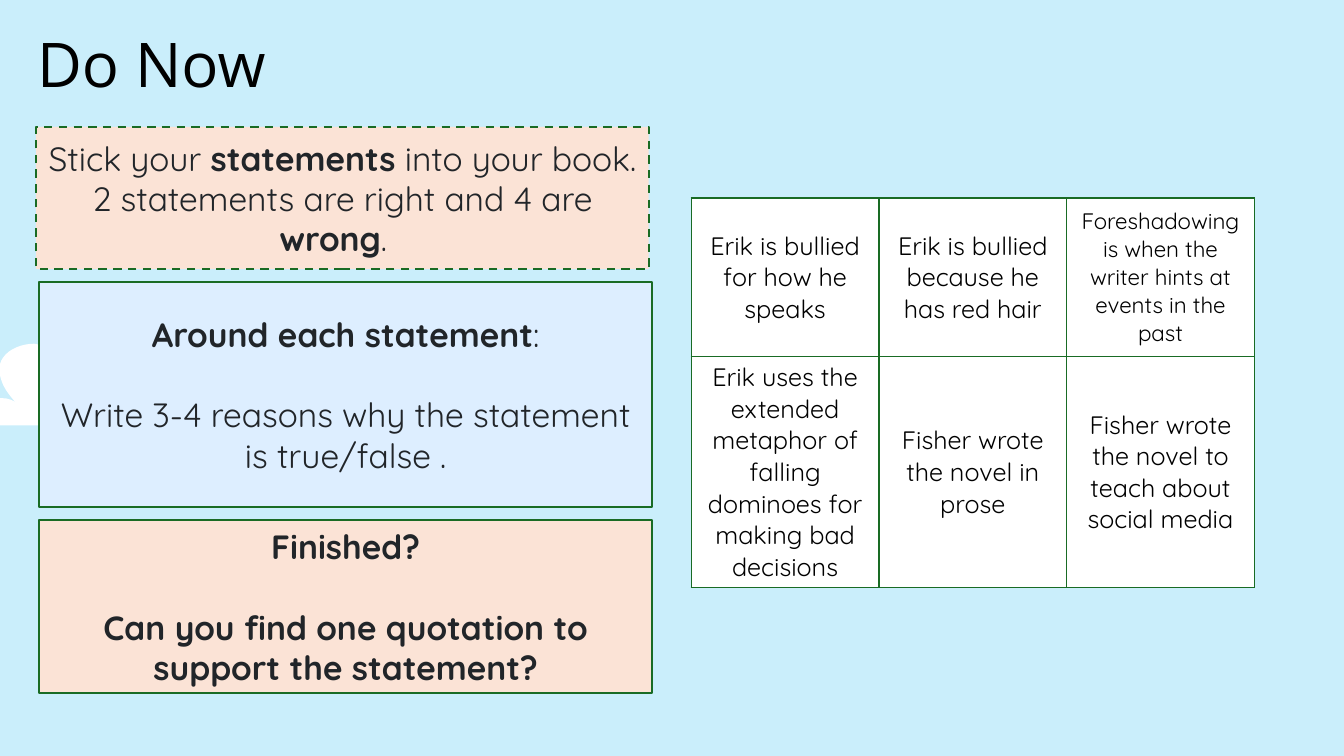
from lxml import etree
from pptx import Presentation
from pptx.dml.color import RGBColor
from pptx.enum import dml, shapes, text
from pptx.oxml import ns
from pptx.util import Cm, Pt

HUES = {
    "sky": "CAEEFB", "white": "FFFFFF", "black": "000000", "ink": "212529",
    "green": "196B24", "peach": "FBE3D6", "blue": "DDEEFF",
}
FONT = "Quicksand"

# Cloud outline in units of 0.0254 cm: two control points and an end per curve,
# or the end alone for a straight side.
START = (34, 341)
SIDES = [
    (22, 341, 9, 346, 3, 355), (-2, 362, -1, 371, 2, 379),
    (5, 387, 11, 394, 17, 401), (14, 397, 8, 395, 2, 395),
    (-2, 395, -6, 396, -9, 399), (-17, 404, -17, 417, -8, 422),
    (227, 422),
    (224, 407, 217, 392, 203, 381), (198, 378, 192, 374, 186, 372),
    (183, 372, 181, 372, 179, 372), (174, 372, 169, 373, 166, 375),
    (161, 378, 159, 385, 162, 389), (155, 381, 149, 373, 139, 367),
    (132, 363, 124, 361, 117, 361), (112, 361, 108, 362, 103, 364),
    (96, 367, 92, 375, 94, 381), (88, 373, 82, 365, 74, 358),
    (65, 350, 53, 343, 39, 342), (37, 341, 36, 341, 34, 341),
]

CELLS = [
    ["Erik is bullied for how he speaks",
     "Erik is bullied because he has red hair",
     "Foreshadowing is when the writer hints at events in the past"],
    ["Erik uses the extended metaphor of falling dominoes for making bad decisions",
     "Fisher wrote the novel in prose",
     "Fisher wrote the novel to teach about social media"],
]

# Each task: left, top, height, fill, dashed, paragraphs of (words, bold) runs.
TASKS = [
    (0.91, 3.2, 3.58, "peach", True, [
        [("Stick your ", False), ("statements", True),
         (" into your book. 2 statements are right and 4 are ", False),
         ("wrong", True), (".  ", False)]]),
    (0.99, 7.11, 5.66, "blue", False, [
        [("Around each statement", True), (":", False)],
        [("Write 3-4 reasons why the statement is true/false .", False)]]),
    (0.99, 13.11, 4.36, "peach", False, [
        [("Finished?", True)],
        [("Can you find one quotation to support the statement?", True)]]),
]


def hue(name):
    return RGBColor.from_string(HUES[name])


def paint(fill, name):
    fill.solid()
    fill.fore_color.rgb = hue(name)


def style(para, size, color, font=FONT, align=text.PP_ALIGN.CENTER):
    para.alignment = align
    para.font.size = Pt(size)
    para.font.name = font
    para.font.color.rgb = hue(color)


def bend(shape, sides):
    """Turn the straight sides of a freeform into cubic curves."""
    ends = [side[-2:] for side in sides]
    left, top = min(x for x, _ in ends), min(y for _, y in ends)
    lines = list(shape._element.iter(ns.qn("a:lnTo")))
    for line, side in zip(lines, sides):
        if len(side) == 2:
            continue
        curve = etree.Element(ns.qn("a:cubicBezTo"))
        for x, y in zip(side[::2], side[1::2]):
            etree.SubElement(curve, ns.qn("a:pt"), x=str(x - left), y=str(y - top))
        line.getparent().replace(line, curve)


def add_cloud(slide):
    pen = slide.shapes.build_freeform(*START, scale=Cm(0.0254))
    pen.add_line_segments([side[-2:] for side in SIDES])
    cloud = pen.convert_to_shape()
    bend(cloud, SIDES)
    cloud.shadow.inherit = False
    paint(cloud.fill, "white")
    cloud.line.fill.background()


def add_title(slide, words):
    title = slide.shapes.title
    title.left, title.top = Cm(0.68), Cm(0.57)
    title.width, title.height = Cm(22.73), Cm(2.28)
    title.text_frame.text = words
    title.text_frame.vertical_anchor = text.MSO_ANCHOR.MIDDLE
    para = title.text_frame.paragraphs[0]
    para.line_spacing = 0.9
    style(para, 44, "black", "Open Sans", text.PP_ALIGN.LEFT)


def add_edges(cell):
    """Draw a thin green border on all four sides."""
    props = cell._tc.get_or_add_tcPr()
    for i, side in enumerate(("a:lnL", "a:lnR", "a:lnT", "a:lnB")):
        edge = etree.Element(ns.qn(side), w=str(Pt(1)))
        solid = etree.SubElement(edge, ns.qn("a:solidFill"))
        etree.SubElement(solid, ns.qn("a:srgbClr"), val=HUES["green"])
        props.insert(i, edge)


def add_grid(slide):
    grid = slide.shapes.add_table(
        2, 3, Cm(17.42), Cm(4.99), Cm(14.19), Cm(8.13)).table
    grid.first_row = grid.horz_banding = False
    for col in grid.columns:
        col.width = Cm(4.73)
    for row, tall, line in zip(grid.rows, (3.99, 4.14), CELLS):
        row.height = Cm(tall)
        for cell, words in zip(row.cells, line):
            cell.text = words
            cell.vertical_anchor = text.MSO_ANCHOR.MIDDLE
            size = 16 if words.startswith("Foreshadowing") else 18
            style(cell.text_frame.paragraphs[0], size, "black")
            paint(cell.fill, "white")
            add_edges(cell)


def add_task(slide, left, top, height, fill, dashed, lines):
    box = slide.shapes.add_shape(
        shapes.MSO_SHAPE.RECTANGLE, Cm(left), Cm(top), Cm(15.44), Cm(height))
    box.shadow.inherit = False
    paint(box.fill, fill)
    box.line.color.rgb = hue("green")
    box.line.width = Pt(1.5)
    if dashed:
        box.line.dash_style = dml.MSO_LINE.DASH
    frame = box.text_frame
    frame.word_wrap = True
    frame.vertical_anchor = text.MSO_ANCHOR.MIDDLE
    for i, runs in enumerate(lines):
        para = frame.add_paragraph() if i else frame.paragraphs[0]
        style(para, 24, "ink")
        if i:
            para.space_before = Pt(28.5)
        for words, bold in runs:
            run = para.add_run()
            run.text = words
            run.font.bold = bold


def main():
    deck = Presentation()
    deck.slide_width, deck.slide_height = Cm(33.87), Cm(19.05)
    slide = deck.slides.add_slide(deck.slide_layouts[5])
    paint(slide.background.fill, "sky")
    add_cloud(slide)
    add_grid(slide)
    for task in TASKS:
        add_task(slide, *task)
    add_title(slide, "Do Now")
    deck.save("out.pptx")


if __name__ == "__main__":
    main()
